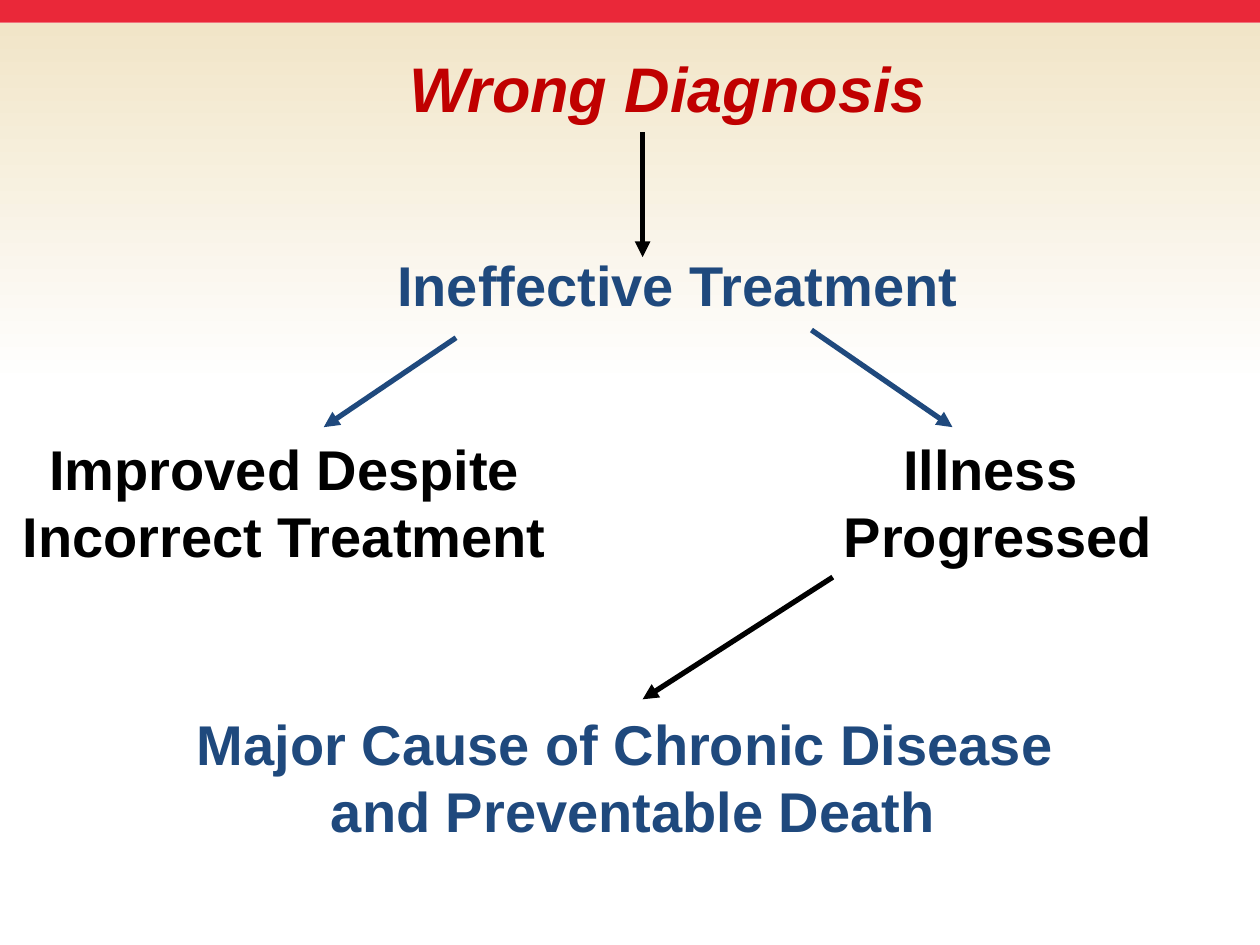
from pptx import Presentation
from pptx.dml.color import RGBColor
from pptx.enum.shapes import MSO_CONNECTOR, MSO_SHAPE
from pptx.enum.text import MSO_ANCHOR, MSO_AUTO_SIZE, PP_ALIGN
from pptx.oxml.ns import qn
from pptx.util import Pt
from lxml import etree

RECT = MSO_SHAPE.RECTANGLE
STRAIGHT = MSO_CONNECTOR.STRAIGHT
TOP = MSO_ANCHOR.TOP
NO_FIT = MSO_AUTO_SIZE.NONE
CENTER = PP_ALIGN.CENTER

THEME = {
    "font": "Arial",
    "title_size": Pt(36),
    "text_size": Pt(32),
    "title": RGBColor.from_string("C00000"),
    "blue": RGBColor.from_string("1F497D"),
    "black": RGBColor.from_string("000000"),
    "band": RGBColor.from_string("EA2839"),
    "sand": RGBColor.from_string("F1E5C8"),
    "white": RGBColor.from_string("FFFFFF"),
}


def write(sp, text, size, color, italic=False):
    tf = sp.text_frame
    tf.text = text
    tf.word_wrap = True
    tf.auto_size = NO_FIT
    tf.vertical_anchor = TOP
    for p in tf.paragraphs:
        p.alignment = CENTER
        p.space_before = Pt(0)
        for r in p.runs:
            r.font.name = THEME["font"]
            r.font.size = size
            r.font.bold = True
            r.font.italic = italic
            r.font.color.rgb = color


prs = Presentation()
prs.slide_width, prs.slide_height = Pt(720), Pt(540)
s = prs.slides.add_slide(prs.slide_layouts[5])

fade = s.shapes.add_shape(RECT, Pt(0), Pt(13), Pt(720), Pt(207.4))
fade.fill.gradient()
fade.fill.gradient_angle = 270
for stop, name in zip(fade.fill.gradient_stops, ("sand", "white")):
    stop.color.rgb = THEME[name]

band = s.shapes.add_shape(RECT, Pt(0), Pt(0), Pt(720), Pt(13))
band.fill.solid()
band.fill.fore_color.rgb = THEME["band"]

for sp in (fade, band):
    sp.line.fill.background()
    sp.shadow.inherit = False

title = s.shapes.title
s.shapes._spTree.append(title._element)
title.left, title.top, title.width, title.height = Pt(179.3), Pt(24.5), Pt(404.6), Pt(51)
write(title, "Wrong Diagnosis", THEME["title_size"], THEME["title"], italic=True)

boxes = [
    ("Illness \nProgressed", 427, 244.8, 286.6, 85, "black"),
    ("Improved Despite\nIncorrect Treatment", -8, 244.8, 341.3, 85, "black"),
    ("Major Cause of Chronic Disease \nand Preventable Death", 29.5, 401.8, 664.6, 85, "blue"),
    ("Ineffective Treatment", 185, 139.7, 404.6, 46, "blue"),
]
for text, x, y, w, h, color in boxes:
    sp = s.shapes.add_textbox(Pt(x), Pt(y), Pt(w), Pt(h))
    write(sp, text, THEME["text_size"], THEME[color])

arrows = [
    (367.2, 75.6, 367.2, 146.9, "black"),
    (260.6, 193, 185, 244.1, "blue"),
    (463.7, 188.6, 544.3, 244.1, "blue"),
    (475.9, 329.8, 367.2, 399.6, "black"),
]
for x1, y1, x2, y2, color in arrows:
    arrow = s.shapes.add_connector(STRAIGHT, Pt(x1), Pt(y1), Pt(x2), Pt(y2))
    arrow.line.color.rgb = THEME[color]
    arrow.line.width = Pt(3)
    etree.SubElement(arrow.line._get_or_add_ln(), qn("a:tailEnd"), type="triangle")
    etree.SubElement(arrow._element.spPr, qn("a:effectLst"))

prs.save("out.pptx")
